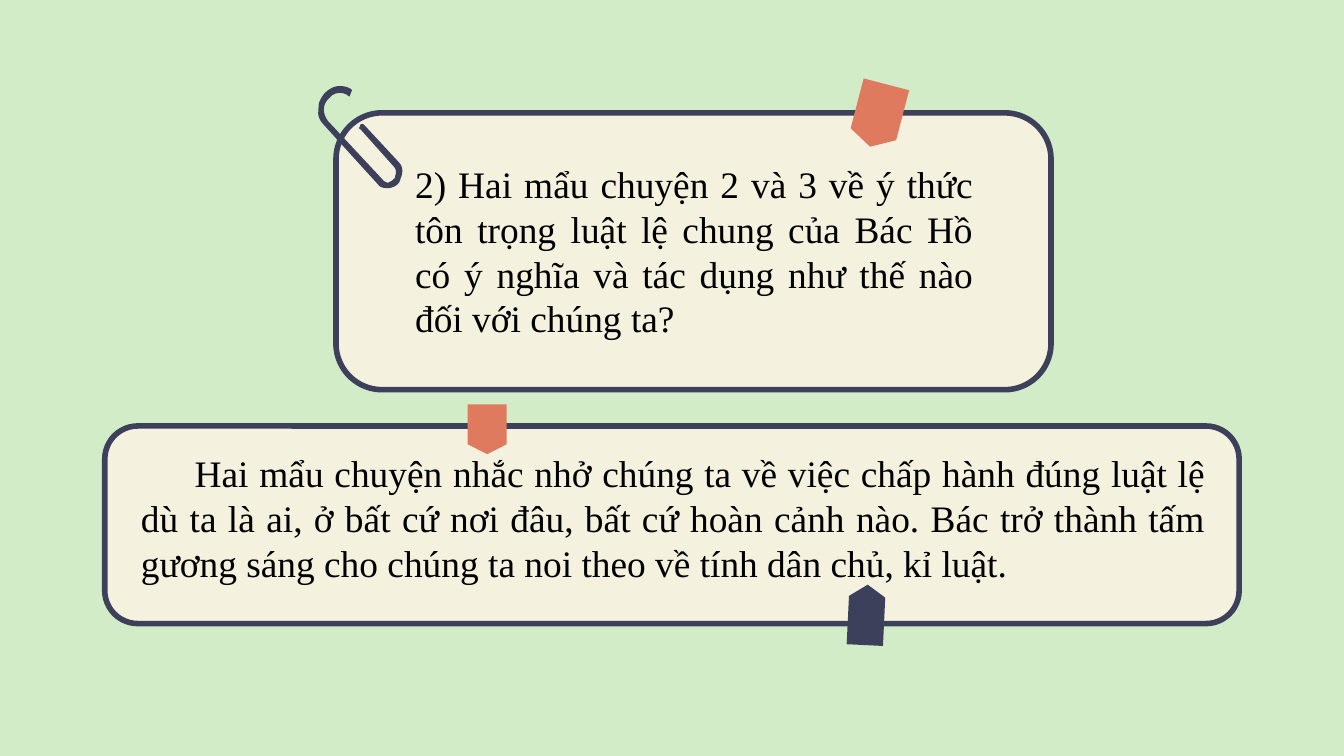
from dataclasses import dataclass

from pptx import Presentation
from pptx import util as u
from pptx.dml.color import RGBColor
from pptx.enum import shapes, text


@dataclass(frozen=True)
class Theme:
    background: str = "D2ECC8"
    paper: str = "F4F1DE"
    ink: str = "3D405B"
    coral: str = "E07A5F"
    body: str = "000000"
    font: str = "Times New Roman"
    size: int = 20
    border: int = 3


THEME = Theme()
CLIP_START = (1, 11)
CLIP_CURVES = [
    [(2, 9), (3, 7), (5, 5)],
    [(8, 2), (12, 0), (16, 0)],
    [(19, 0), (23, 1), (25, 3)],
    [(23, 8)],
    [(19, 4), (12, 4), (8, 9)],
    [(7, 10), (6, 11), (5, 13)],
    [(3, 17), (4, 22), (7, 26)],
    [(48, 70)],
    [(49, 71), (50, 72), (52, 72)],
    [(53, 71), (55, 71), (56, 69)],
    [(57, 69), (57, 68), (57, 67)],
    [(58, 65), (58, 62), (56, 60)],
    [(31, 32)],
    [(30, 32), (30, 31), (31, 30)],
    [(31, 29), (31, 29), (31, 29)],
    [(32, 28), (33, 28), (34, 29)],
    [(60, 57)],
    [(63, 60), (63, 65), (61, 69)],
    [(61, 70), (60, 72), (59, 73)],
    [(57, 75), (54, 76), (52, 76)],
    [(49, 76), (46, 76), (44, 73)],
    [(4, 29)],
    [(1, 26), (-1, 22), (0, 18)],
    [(0, 15), (0, 13), (1, 11)],
]


def paint(sp, color):
    sp.shadow.inherit = False
    sp.fill.solid()
    sp.fill.fore_color.rgb = RGBColor.from_string(color)
    sp.line.fill.background()


def add_paper(parent, box):
    sp = parent.add_shape(shapes.MSO_SHAPE.ROUNDED_RECTANGLE, *map(u.Inches, box))
    paint(sp, THEME.paper)
    sp.adjustments[0] = 0.167
    sp.line.color.rgb = RGBColor.from_string(THEME.ink)
    sp.line.width = u.Pt(THEME.border)


def add_tab(parent, box, color, rotation=0):
    sp = parent.add_shape(shapes.MSO_SHAPE.FLOWCHART_OFFPAGE_CONNECTOR,
                          *map(u.Inches, box))
    paint(sp, color)
    sp.rotation = rotation


def bezier(p0, p1, p2, p3, steps=6):
    for i in range(1, steps + 1):
        t = i / steps
        yield tuple((1 - t) ** 3 * a + 3 * t * (1 - t) ** 2 * b
                    + 3 * t ** 2 * (1 - t) * c + t ** 3 * d
                    for a, b, c, d in zip(p0, p1, p2, p3))


def add_paper_clip(parent, left, top):
    points = [CLIP_START]
    for curve in CLIP_CURVES:
        points += curve if len(curve) == 1 else bezier(points[-1], *curve)
    start, *rest = [(u.Inches(x / 100), u.Inches(y / 100)) for x, y in points]
    outline = parent.build_freeform(*start)
    outline.add_line_segments(rest, close=True)
    paint(outline.convert_to_shape(u.Inches(left), u.Inches(top)), THEME.ink)


def add_body(parent, box, words, indent=0):
    tf = parent.add_textbox(*map(u.Inches, box)).text_frame
    tf.word_wrap = True
    tf.auto_size = text.MSO_AUTO_SIZE.SHAPE_TO_FIT_TEXT
    tf.text = words
    p = tf.paragraphs[0]
    p.alignment = text.PP_ALIGN.JUSTIFY
    p.space_after = u.Pt(9)
    p._p.get_or_add_pPr().set("indent", str(u.Inches(indent)))
    font = p.runs[0].font
    font.name = THEME.font
    font.size = u.Pt(THEME.size)
    font.color.rgb = RGBColor.from_string(THEME.body)


def question_card(slide, x, y, w, h):
    card = slide.shapes.add_group_shape().shapes
    add_paper(card, (x, y, w, h))
    add_paper_clip(card, x - 0.13, y - 0.2)
    add_tab(slide.shapes, (x + 3.86, y - 0.22, 0.35, 0.48), THEME.coral, 14.6)
    add_body(slide.shapes, (x + 0.49, y + 0.31, 4.35, 1.45),
             "2) Hai mẩu chuyện 2 và 3 về ý thức tôn trọng luật lệ chung của "
             "Bác Hồ có ý nghĩa và tác dụng như thế nào đối với chúng ta?")


def answer_card(slide, x, y, w, h):
    card = slide.shapes.add_group_shape().shapes
    add_paper(card, (x, y, w, h))
    add_tab(card, (x + 2.7, y - 0.16, 0.29, 0.37), THEME.coral)
    add_tab(card, (x + 5.53, y + 1.18, 0.27, 0.45), THEME.ink, 182.7)
    add_body(card, (x + 0.17, y + 0.13, 8.12, 1.11),
             "Hai mẩu chuyện nhắc nhở chúng ta về việc chấp hành đúng luật lệ "
             "dù ta là ai, ở bất cứ nơi đâu, bất cứ hoàn cảnh nào. Bác trở "
             "thành tấm gương sáng cho chúng ta noi theo về tính dân chủ, "
             "kỉ luật.", indent=0.4)


def main():
    prs = Presentation()
    prs.slide_width = u.Inches(10)
    prs.slide_height = prs.slide_width * 9 // 16
    s = prs.slides.add_slide(prs.slide_layouts[6])
    s.background.fill.solid()
    s.background.fill.fore_color.rgb = RGBColor.from_string(THEME.background)
    question_card(s, 2.5, 0.84, 5.32, 2.06)
    answer_card(s, 0.78, 3.17, 8.44, 1.47)
    prs.save("out.pptx")


if __name__ == "__main__":
    main()
